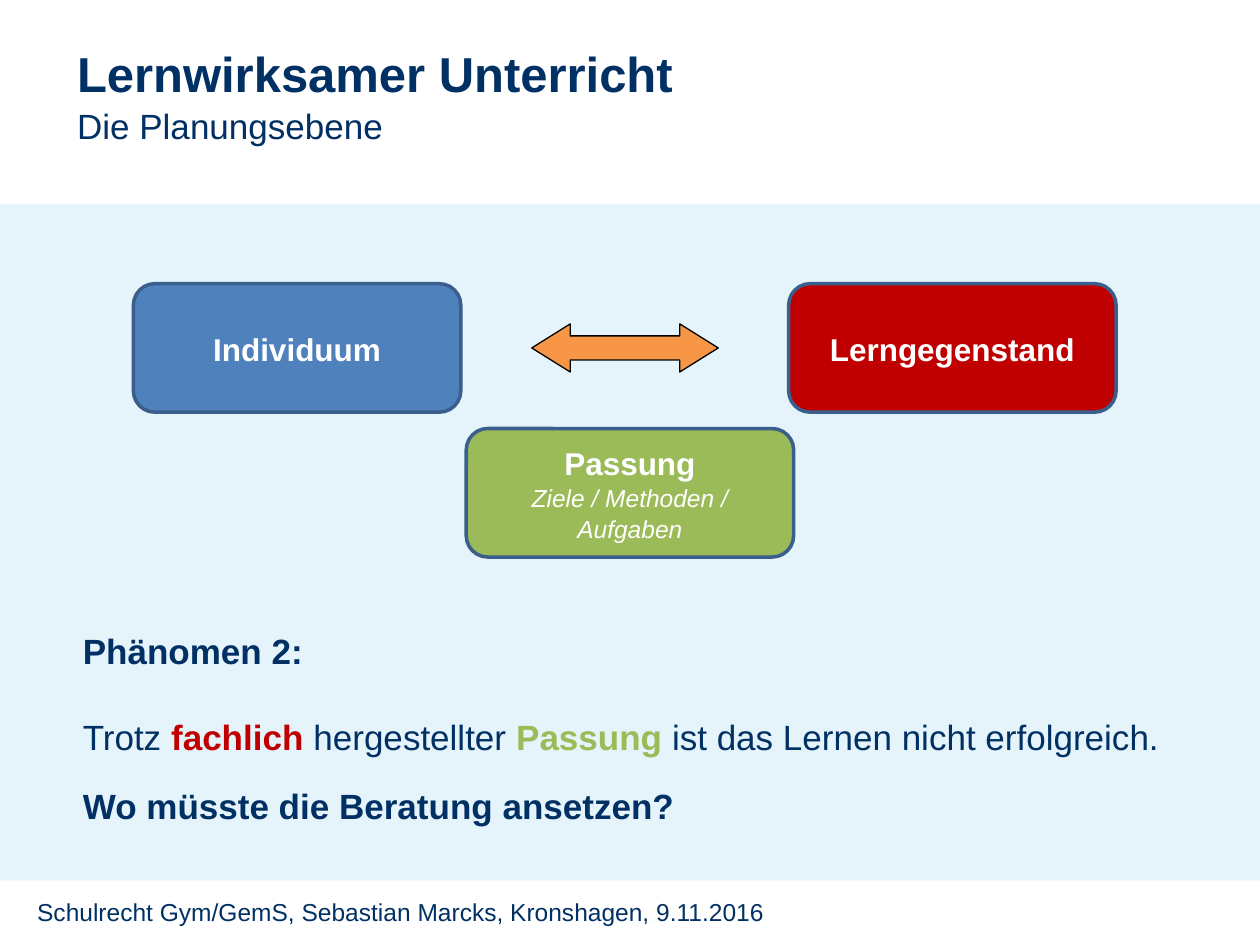
"""Build the slide on effective teaching and its planning level."""
from lxml import etree
from pptx import Presentation
from pptx.dml.color import RGBColor
from pptx.enum.shapes import MSO_SHAPE
from pptx.enum.text import MSO_ANCHOR, MSO_AUTO_SIZE, PP_ALIGN
from pptx.oxml.ns import qn
from pptx.util import Cm, Pt

RECT, ROUND = MSO_SHAPE.RECTANGLE, MSO_SHAPE.ROUNDED_RECTANGLE
ARROW = MSO_SHAPE.LEFT_RIGHT_ARROW
TOP, MIDDLE = MSO_ANCHOR.TOP, MSO_ANCHOR.MIDDLE
LEFT, CENTER = PP_ALIGN.LEFT, PP_ALIGN.CENTER
FIXED = MSO_AUTO_SIZE.NONE

FONT = "Arial"
NAVY, WHITE, BLACK = "003064", "FFFFFF", "000000"
BLUE, RED, GREEN = "4F81BD", "C00000", "9BBB59"
ORANGE, EDGE, SKY = "F79646", "3A5F8C", "008CCF"


def paint(target, color):
    """Give a fill a solid colour from a hex string."""
    target.solid()
    target.fore_color.rgb = RGBColor.from_string(color)


def run(text, size=20, color=NAVY, bold=False, italic=False):
    """Describe one run of text."""
    return text, size, color, bold, italic


def write(frame, lines, align=LEFT, anchor=TOP):
    """Write lines, each a space before and a list of runs."""
    frame.word_wrap = True
    frame.auto_size = FIXED
    frame.vertical_anchor = anchor
    for index, (gap, runs) in enumerate(lines):
        para = frame.add_paragraph() if index else frame.paragraphs[0]
        para.alignment = align
        para.line_spacing = 1.05
        para.space_before = Pt(gap)
        for text, size, color, bold, italic in runs:
            part = para.add_run()
            part.text = text
            font = part.font
            font.name, font.size = FONT, Pt(size)
            font.bold, font.italic = bold, italic
            paint(font.fill, color)


def add_shape(slide, kind, area, fill, edge=None, width=0):
    """Add a flat preset shape, outlined if an edge colour is given."""
    shape = slide.shapes.add_shape(kind, *map(Cm, area))
    shape.shadow.inherit = False
    paint(shape.fill, fill)
    if edge:
        paint(shape.line.fill, edge)
        shape.line.width = Pt(width)
    else:
        shape.line.fill.background()
    return shape


def add_band(slide):
    """Add the pale band behind the content."""
    band = add_shape(slide, RECT, (0, 4.11, 25.4, 13.64), SKY)
    color = band.fill._xPr.find(".//" + qn("a:srgbClr"))
    etree.SubElement(color, qn("a:alpha")).set("val", "10000")


def add_title(slide, lines):
    """Place and fill the title."""
    title = slide.shapes.title
    title.left, title.top = Cm(1.3), Cm(0.69)
    title.width, title.height = Cm(13.59), Cm(3.51)
    write(title.text_frame, lines)


def add_text(slide, area, lines):
    """Add a text box."""
    box = slide.shapes.add_textbox(*map(Cm, area))
    write(box.text_frame, lines)


def add_card(slide, left, top, fill, name, note=None):
    """Add a rounded card with a name and an optional note."""
    card = add_shape(slide, ROUND, (left, top, 6.6, 2.59), fill, EDGE, 2)
    lines = [(0, [run(name, 18, WHITE, True)])]
    if note:
        lines.append((0, [run(note, 14, WHITE, italic=True)]))
    write(card.text_frame, lines, CENTER, MIDDLE)


def add_arrow(slide):
    """Add the double arrow between the upper cards."""
    area = (10.72, 6.53, 3.76, 0.97)
    arrow = add_shape(slide, ARROW, area, ORANGE, BLACK, 0.75)
    arrow.adjustments[0] = 0.5
    arrow.adjustments[1] = 0.8


def main():
    """Build and save the slide."""
    deck = Presentation()
    deck.slide_width, deck.slide_height = Cm(25.4), Cm(19.05)
    slide = deck.slides.add_slide(deck.slide_layouts[5])
    add_band(slide)
    add_title(slide, [
        (0, [run("Lernwirksamer Unterricht", 28, bold=True)]),
        (0, [run("Die Planungsebene")]),
    ])
    add_card(slide, 2.69, 5.72, BLUE, "Individuum")
    add_card(slide, 15.9, 5.72, RED, "Lerngegenstand")
    add_card(slide, 9.4, 8.64, GREEN, "Passung", "Ziele / Methoden / Aufgaben")
    add_arrow(slide)
    add_text(slide, (1.42, 12.52, 22.56, 4.19), [
        (0, [run("Phänomen 2:", bold=True)]),
        (24, [
            run("Trotz "),
            run("fachlich ", color=RED, bold=True),
            run("hergestellter "),
            run("Passung", color=GREEN, bold=True),
            run(" ist das Lernen nicht erfolgreich."),
        ]),
        (14, [run("Wo müsste die Beratung ansetzen?", bold=True)]),
    ])
    footer = "Schulrecht Gym/GemS, Sebastian Marcks, Kronshagen, 9.11.2016"
    add_text(slide, (0.5, 17.93, 21.8, 1.1), [(0, [run(footer, 14)])])
    deck.save("out.pptx")


if __name__ == "__main__":
    main()
